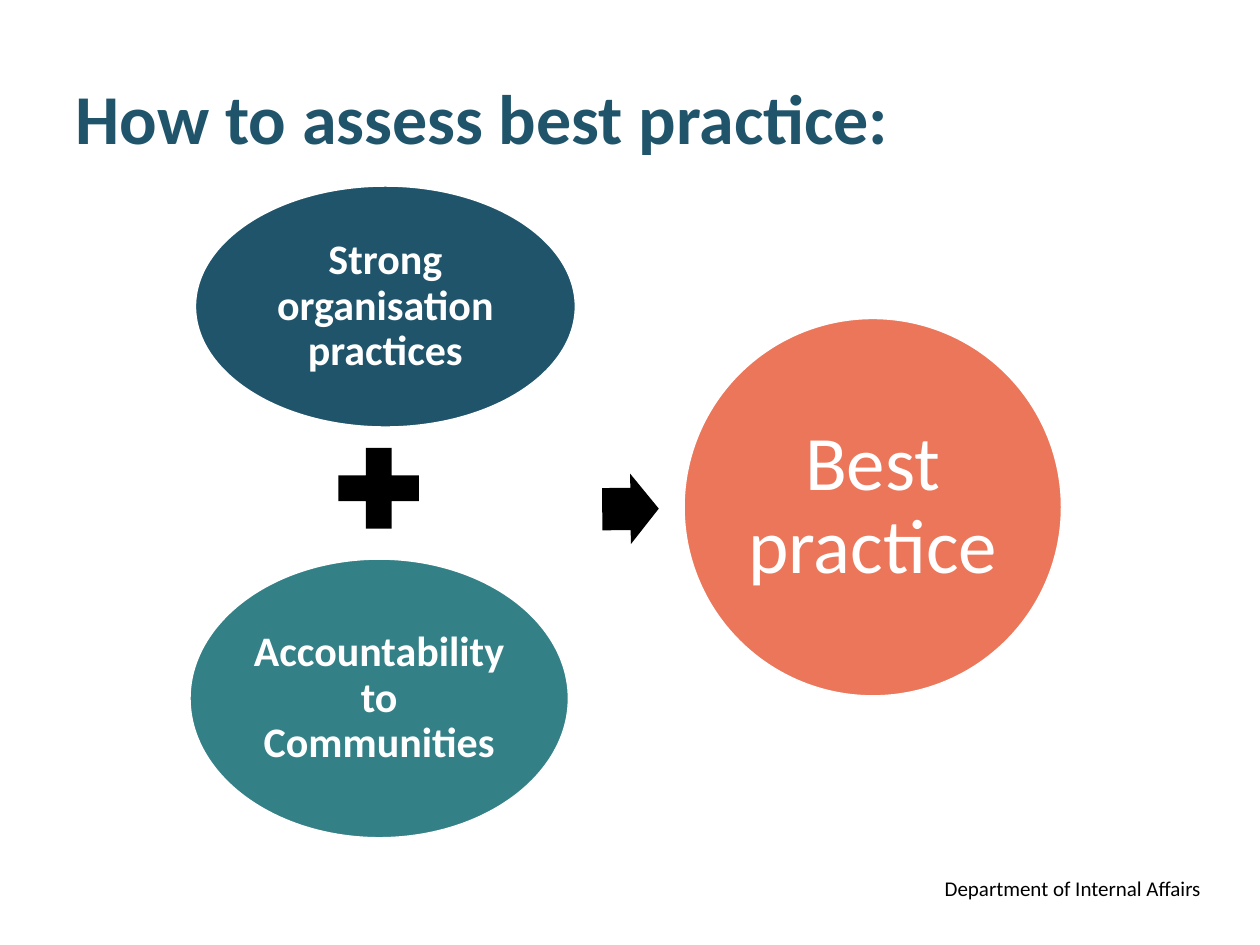
"""Build a slide showing how two ingredients add up to best practice."""
import pptx
import pptx.dml.color
import pptx.enum.shapes
import pptx.enum.text
import pptx.util

Cm = pptx.util.Cm
Pt = pptx.util.Pt
SHAPE = pptx.enum.shapes.MSO_SHAPE
ALIGN = pptx.enum.text.PP_ALIGN
MIDDLE = pptx.enum.text.MSO_ANCHOR.MIDDLE
COLOURS = {"navy": "1F546B", "teal": "348087", "coral": "EB765A",
           "white": "FFFFFF", "black": "000000"}


def write(shape, text, size, colour, bold, align):
    frame = shape.text_frame
    frame.text = text
    frame.word_wrap = True
    paragraph = frame.paragraphs[0]
    paragraph.alignment = align
    font = paragraph.runs[0].font
    font.name, font.size, font.bold = "Calibri", Pt(size), bold
    font.color.rgb = pptx.dml.color.RGBColor.from_string(COLOURS[colour])
    return frame


def draw(page, kind, place, colour):
    shape = page.shapes.add_shape(kind, *map(Cm, place))
    shape.shadow.inherit = False
    shape.fill.solid()
    shape.fill.fore_color.rgb = pptx.dml.color.RGBColor.from_string(COLOURS[colour])
    shape.line.fill.background()
    return shape


deck = pptx.Presentation()
deck.slide_width, deck.slide_height = Cm(25.4), Cm(19.05)
page = deck.slides.add_slide(deck.slide_layouts[5])

title = page.shapes.title
title.left, title.top, title.width, title.height = map(Cm, (1.27, 0.76, 22.86, 3.18))
write(title, "How to assess best practice:", 40, "navy", True, ALIGN.LEFT)
title.text_frame.vertical_anchor = MIDDLE

footer = page.shapes.add_textbox(*map(Cm, (16.05, 17.53, 8.41, 1.02)))
write(footer, "Department of Internal Affairs", 12, "black", False, ALIGN.RIGHT)

ovals = [
    ("Strong organisation practices", (3.92, 3.73, 7.7, 4.9), "navy", 24, True, 0.08),
    ("Accountability to Communities", (3.81, 11.25, 7.67, 5.66), "teal", 24, True, 0.08),
    ("Best practice", (13.77, 6.4, 7.65, 7.65), "coral", 44, False, 0.15),
]
for text, place, colour, size, bold, inset in ovals:
    oval = draw(page, SHAPE.OVAL, place, colour)
    oval.line.color.rgb = pptx.dml.color.RGBColor.from_string(COLOURS["white"])
    oval.line.width = Pt(2)
    frame = write(oval, text, size, "white", bold, ALIGN.CENTER)
    frame.vertical_anchor = MIDDLE
    frame.margin_left = frame.margin_right = Cm(inset)
    frame.margin_top = frame.margin_bottom = Cm(inset)
    frame.paragraphs[0].line_spacing = 0.9

draw(page, SHAPE.MATH_PLUS, (6.53, 8.74, 2.21, 2.21), "black")
arrow = draw(page, SHAPE.RIGHT_ARROW, (12.14, 9.55, 1.14, 1.42), "black")
arrow.adjustments[0], arrow.adjustments[1] = 0.6, 0.5
arrow.rotation = 359.4

deck.save("out.pptx")
